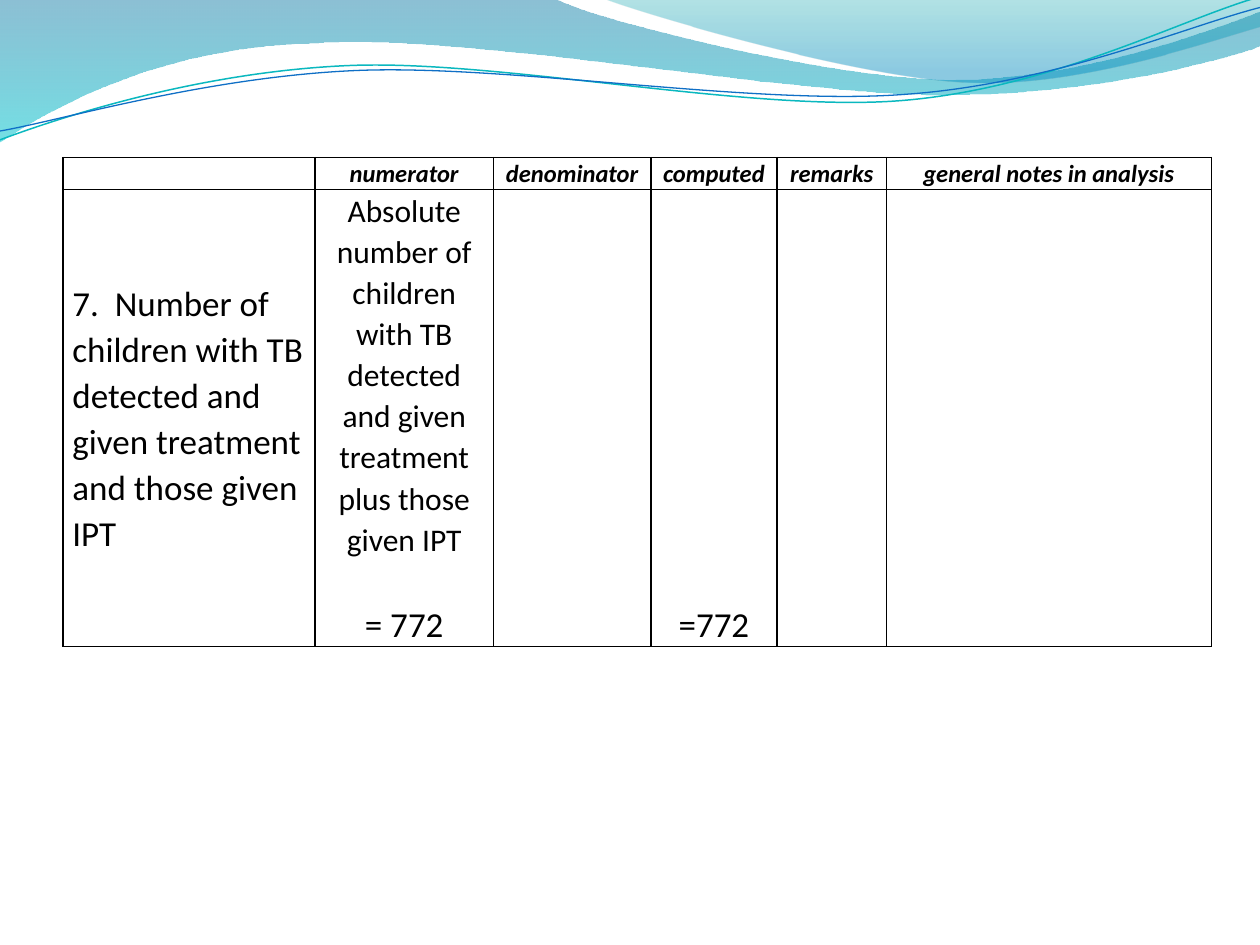
import math
import pptx
import pptx.util
import pptx.dml.color
import pptx.enum.text
import pptx.oxml.ns
import lxml.etree

Pt = pptx.util.Pt
RGB = pptx.dml.color.RGBColor
Align = pptx.enum.text.PP_ALIGN
Anchor = pptx.enum.text.MSO_ANCHOR
qn = pptx.oxml.ns.qn

BLACK = RGB(0x00, 0x00, 0x00)
BLUE = RGB(0x00, 0x74, 0xA1)
CYAN = RGB(0x00, 0xC6, 0xCF)
TEAL = RGB(0x00, 0xA1, 0xA9)
SKY = RGB(0x00, 0x8B, 0xBF)
AQUA = RGB(0x0A, 0xB8, 0xBF)
ROYAL = RGB(0x0F, 0x6F, 0xC6)
TILT = 2.7

deck = pptx.Presentation()
deck.slide_width, deck.slide_height = Pt(720), Pt(540)
slide = deck.slides.add_slide(deck.slide_layouts[6])


def draw(start, parts, close):
    """Outline from points: a pair is a straight line, a six is a Bezier curve."""
    flat = [v for part in (start, *parts) for v in part]
    dots = [(Pt(x * 72), Pt(y * 72)) for x, y in zip(flat[::2], flat[1::2])]
    form = slide.shapes.build_freeform(*dots[0], scale=1.0)
    form.add_line_segments(dots[1:], close=close)
    shape = form.convert_to_shape()
    shape.shadow.inherit = False

    # Join each three steps of a six into one curve
    steps = iter(list(shape._element.iter(qn("a:lnTo"))))
    for part in parts:
        first = next(steps)
        if len(part) == 6:
            first.tag = qn("a:cubicBezTo")
            for step in (next(steps), next(steps)):
                first.append(step[0])
                step.getparent().remove(step)
    return shape


def turn(part, mid):
    """Points of one part turned by the tilt about a middle point."""
    cos, sin = math.cos(math.radians(TILT)), math.sin(math.radians(TILT))
    out = []
    for x, y in zip(part[::2], part[1::2]):
        dx, dy = x - mid[0], y - mid[1]
        out += [mid[0] + dx * cos - dy * sin, mid[1] + dx * sin + dy * cos]
    return out


# Shaded waves, points in inches; stops are position, colour, opacity
waves = [
    ((0, 0),
     [(4.4, -0.01), (4.76, 0.17, 6.64, 0.63, 7.58, 0.63),
      (8.53, 0.63, 9.58, 0.26, 10, 0.09), (10.01, 0.36),
      (9.83, 0.44, 8.7, 0.76, 7.46, 0.75), (6.22, 0.75, 3.82, 0.28, 2.57, 0.34),
      (1.29, 0.36, 0.46, 0.83, -0.01, 1.13), (0, 0)],
     [(0, BLUE, 45), (1, CYAN, 55)]),
    ((4.79, -0.01),
     [(5.09, 0.11, 6.82, 0.62, 7.69, 0.65), (8.56, 0.69, 9.61, 0.32, 10, 0.21),
      (10, 0), (4.79, -0.01)],
     [(0, TEAL, 30), (0.8, SKY, 45)]),
]
for start, parts, stops in waves:
    wave = draw(start, parts, True)
    wave.line.fill.background()
    wave.fill.gradient()
    wave.fill.gradient_angle = 270
    for stop, (pos, tint, clear) in zip(wave.fill.gradient_stops, stops):
        stop.position = pos
        stop.color.rgb = tint
    for node, (pos, tint, clear) in zip(wave._element.iter(qn("a:gs")), stops):
        lxml.etree.SubElement(node[0], qn("a:alpha"), val=str(clear * 1000))

# Thin tilted wave lines, with the middle each one turns about
lines = [
    ((0, 1.11),
     [(0.48, 0.93, 1.58, 0.57, 2.77, 0.52), (3.95, 0.47, 5.93, 0.89, 7.13, 0.8),
      (8.33, 0.71, 9.38, 0.15, 9.98, -0.02)], (4.99, 0.58), AQUA, 0.85),
    ((0, 1.04),
     [(0.47, 0.96, 1.64, 0.61, 2.83, 0.56), (4.03, 0.51, 5.97, 0.84, 7.17, 0.75),
      (8.36, 0.67, 9.41, 0.21, 10, 0.06)], (5, 0.59), ROYAL, 0.75),
]
for start, parts, mid, tint, width in lines:
    curve = draw(turn(start, mid), [turn(part, mid) for part in parts], False)
    curve.rotation = -TILT
    curve.fill.background()
    curve.line.color.rgb = tint
    curve.line.width = Pt(width)

# Table cells: each paragraph is text, size, space before
heads = ["", "numerator", "denominator", "computed", "remarks",
         "general notes in analysis"]
body = [
    [("7.  Number of children with TB detected and given treatment "
      "and those given IPT", 20, 0)],
    [("Absolute number of children with TB detected and given treatment "
      "plus those given IPT", 18, 0), ("= 772", 20, 23.5)],
    [("", 20, 0)],
    [("=772", 20, 0)],
    [("", 20, 0)],
    [("", 20, 0)],
]
rows = [[[(head, 14, 0)] for head in heads], body]
widths = [144, 102, 90, 72, 62.6, 185.6]
heights = [18.3, 260.8]

frame = slide.shapes.add_table(2, 6, Pt(36), Pt(90), Pt(sum(widths)), Pt(sum(heights)))
table = frame.table
table.first_row = table.horz_banding = False
for col, width in zip(table.columns, widths):
    col.width = Pt(width)
for row, height in zip(table.rows, heights):
    row.height = Pt(height)

for r, row in enumerate(rows):
    for c, paras in enumerate(row):
        cell = table.cell(r, c)
        cell.margin_left = cell.margin_right = Pt(5.4)
        cell.margin_top = cell.margin_bottom = 0
        cell.vertical_anchor = Anchor.BOTTOM if (r, c) == (1, 3) else Anchor.MIDDLE

        # Black border on all four sides
        props = cell._tc.get_or_add_tcPr()
        for side in ("lnL", "lnR", "lnT", "lnB"):
            edge = lxml.etree.SubElement(props, qn("a:" + side), w=str(Pt(1)))
            ink = lxml.etree.SubElement(edge, qn("a:solidFill"))
            lxml.etree.SubElement(ink, qn("a:srgbClr"), val=str(BLACK))
        cell.fill.background()

        for i, (text, size, gap) in enumerate(paras):
            para = cell.text_frame.add_paragraph() if i else cell.text_frame.paragraphs[0]
            if not text:
                lxml.etree.SubElement(para._p, qn("a:endParaRPr"), sz=str(size * 100))
                continue
            para.alignment = Align.LEFT if (r, c) == (1, 0) else Align.CENTER
            para.line_spacing = 1.07
            para.space_before = Pt(gap)
            run = para.add_run()
            run.text = text
            run.font.name = "Calibri"
            run.font.size = Pt(size)
            run.font.color.rgb = BLACK
            run.font.bold = run.font.italic = r == 0

deck.save("out.pptx")
